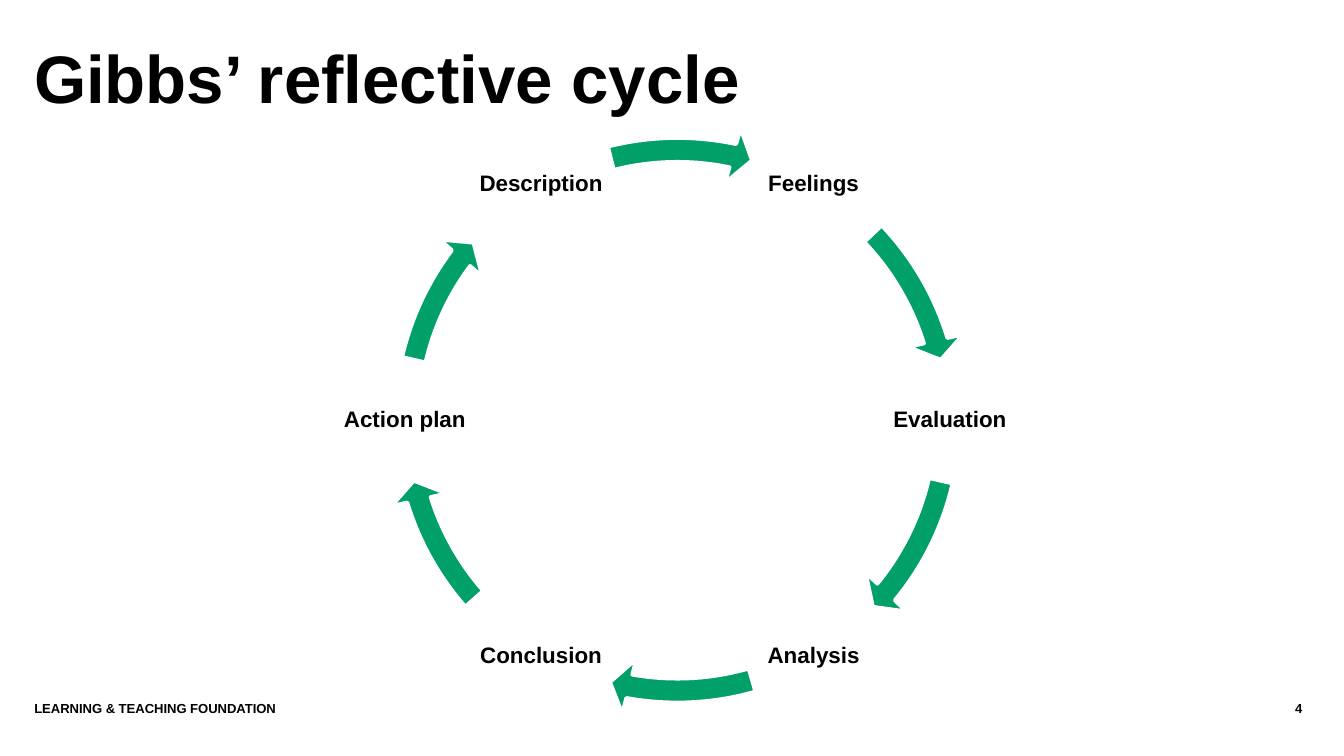
import math

import pptx
import pptx.dml.color
import pptx.enum.shapes
import pptx.enum.text
import pptx.util

Pt = pptx.util.Pt
ALIGN = pptx.enum.text.PP_ALIGN
ANCHOR = pptx.enum.text.MSO_ANCHOR

TITLE = "Gibbs’ reflective cycle"
FOOTER = "LEARNING & TEACHING FOUNDATION"
PAGE_NUMBER = "4"

# Stage, label width, then start and end angle of the arrow that leads on from
# it (degrees clockwise from three o'clock)
STAGES = [
    ("Feelings", 65.5, 316.38, 342.9),
    ("Evaluation", 65.5, 12.94, 39.46),
    ("Analysis", 65.5, 73.97, 100.24),
    ("Conclusion", 73.4, 138.69, 162.9),
    ("Action plan", 77.8, 192.94, 216.87),
    ("Description", 74.2, 255.78, 281.86),
]

THEME = {
    "font": "Arial",
    "text": pptx.dml.color.RGBColor(0x00, 0x00, 0x00),
    "arrow": pptx.dml.color.RGBColor(0x00, 0xA0, 0x68),
    "outline": pptx.dml.color.RGBColor(0xFF, 0xFF, 0xFF),
    "title_size": 36,
    "label_size": 12,
    "footer_size": 7,
}

CENTRE_X, CENTRE_Y = 362.9, 225.2
LABEL_RADIUS = 146
LABEL_HEIGHT = 65.5
RING_SIZE = 319.7
FIRST_ANGLE = -60
ARROW_THICKNESS = 0.04
ARROW_HEAD_WIDTH = 0.047
ARROW_HEAD_ANGLE = 4.17
ANGLE_UNIT = 0.6  # adjustment value of one degree


def add_text(slide, text, left, top, width, height, *, size,
             align=ALIGN.LEFT, anchor=ANCHOR.TOP, inset=0, spacing=1.0):
    frame = slide.shapes.add_textbox(Pt(left), Pt(top), Pt(width), Pt(height)).text_frame
    frame.word_wrap = True
    frame.vertical_anchor = anchor
    frame.margin_left = frame.margin_right = Pt(inset)
    frame.margin_top = frame.margin_bottom = Pt(inset)
    paragraph = frame.paragraphs[0]
    paragraph.alignment = align
    paragraph.line_spacing = spacing
    run = paragraph.add_run()
    run.text = text
    run.font.name = THEME["font"]
    run.font.size = Pt(size)
    run.font.bold = True
    run.font.color.rgb = THEME["text"]


def add_cycle_arrow(slide, start, end):
    arrow = slide.shapes.add_shape(
        pptx.enum.shapes.MSO_SHAPE.CIRCULAR_ARROW,
        Pt(CENTRE_X - RING_SIZE / 2), Pt(CENTRE_Y - RING_SIZE / 2),
        Pt(RING_SIZE), Pt(RING_SIZE))
    settings = (ARROW_THICKNESS, ARROW_HEAD_ANGLE * ANGLE_UNIT,
                end * ANGLE_UNIT, start * ANGLE_UNIT, ARROW_HEAD_WIDTH)
    for index, value in enumerate(settings):
        arrow.adjustments[index] = value
    arrow.shadow.inherit = False
    arrow.fill.solid()
    arrow.fill.fore_color.rgb = THEME["arrow"]
    arrow.line.color.rgb = THEME["outline"]
    arrow.line.width = Pt(2)


def add_cycle(slide):
    step = 360 / len(STAGES)
    for index, (stage, width, start, end) in enumerate(STAGES):
        angle = math.radians(FIRST_ANGLE + index * step)
        label_x = CENTRE_X + LABEL_RADIUS * math.cos(angle)
        label_y = CENTRE_Y + LABEL_RADIUS * math.sin(angle)
        add_text(slide, stage, label_x - width / 2, label_y - LABEL_HEIGHT / 2,
                 width, LABEL_HEIGHT, size=THEME["label_size"],
                 align=ALIGN.CENTER, anchor=ANCHOR.MIDDLE, inset=1.2, spacing=0.9)
        add_cycle_arrow(slide, start, end)


def main():
    deck = pptx.Presentation()
    deck.slide_width, deck.slide_height = Pt(720), Pt(405)
    slide = deck.slides.add_slide(deck.slide_layouts[6])

    add_text(slide, TITLE, 18.3, 19.4, 664.6, 54.7, size=THEME["title_size"])
    add_cycle(slide)
    add_text(slide, FOOTER, 18.4, 375.1, 605.5, 21.6, size=THEME["footer_size"])
    add_text(slide, PAGE_NUMBER, 626.4, 375.1, 71.3, 21.6,
             size=THEME["footer_size"], align=ALIGN.RIGHT)

    deck.save("out.pptx")


if __name__ == "__main__":
    main()
